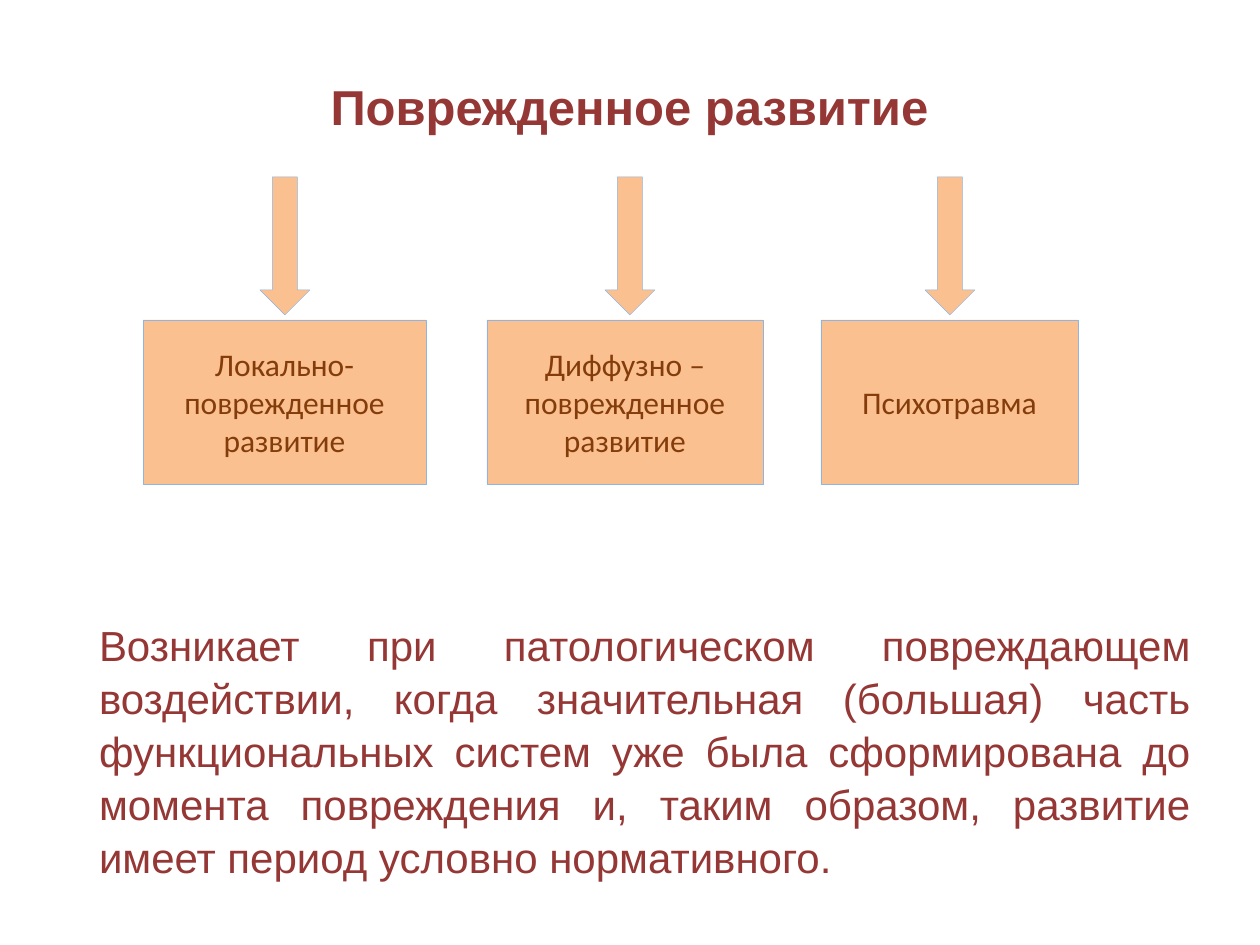
import pptx
import pptx.util
import pptx.dml.color
import pptx.enum.shapes
import pptx.enum.text

TITLE = "Поврежденное развитие"
BODY = (
    "Возникает при патологическом повреждающем воздействии, когда значительная "
    "(большая) часть функциональных систем уже была сформирована до момента "
    "повреждения и, таким образом, развитие имеет период условно нормативного."
)
# label, box left, box width, arrow centre
TYPES = [
    ("Локально-поврежденное развитие", 143, 283, 285),
    ("Диффузно –поврежденное развитие", 487, 276, 630),
    ("Психотравма", 821, 257, 950),
]
BOX_TOP, BOX_H = 320, 164
ARROW_TOP, ARROW_W, ARROW_H = 177, 50, 138
DARK_RED, BROWN, PEACH, BLUE = "953735", "843C0B", "FAC090", "8EB4E3"
SHAPE = pptx.enum.shapes.MSO_SHAPE
ALIGN = pptx.enum.text.PP_ALIGN
ANCHOR = pptx.enum.text.MSO_ANCHOR


def px(*values):
    return [pptx.util.Emu(v * 914400 // 126) for v in values]


def rgb(value):
    return pptx.dml.color.RGBColor.from_string(value)


def write(shape, text, size, font, color, align, anchor, bold=False):
    tf = shape.text_frame
    tf.word_wrap = True
    tf.vertical_anchor = anchor
    p = tf.paragraphs[0]
    p.alignment = align
    r = p.add_run()
    r.text = text
    r.font.size = pptx.util.Pt(size)
    r.font.name = font
    r.font.bold = bold
    r.font.color.rgb = rgb(color)
    return p


def add_peach(slide, kind, *box):
    s = slide.shapes.add_shape(kind, *px(*box))
    s.shadow.inherit = False
    s.fill.solid()
    s.fill.fore_color.rgb = rgb(PEACH)
    s.line.color.rgb = rgb(BLUE)
    s.line.width = pptx.util.Pt(0.25)
    return s


def main():
    """Build the slide on the types of damaged development."""
    prs = pptx.Presentation()
    prs.slide_width, prs.slide_height = px(1260, 945)
    slide = prs.slides.add_slide(prs.slide_layouts[6])

    title = slide.shapes.add_textbox(*px(204, 56, 851, 100))
    write(title, TITLE, 28, "Arial", DARK_RED, ALIGN.CENTER, ANCHOR.MIDDLE, True)

    body = slide.shapes.add_textbox(*px(75, 611, 1128, 243))
    body.text_frame.margin_left = px(24)[0]
    p = write(body, BODY, 24, "Arial", DARK_RED, ALIGN.JUSTIFY, ANCHOR.TOP)
    p.line_spacing = 1.05

    for label, left, width, centre in TYPES:
        s = add_peach(slide, SHAPE.RECTANGLE, left, BOX_TOP, width, BOX_H)
        write(s, label, 18, "Calibri", BROWN, ALIGN.CENTER, ANCHOR.MIDDLE)
        add_peach(slide, SHAPE.DOWN_ARROW, centre - ARROW_W // 2, ARROW_TOP, ARROW_W, ARROW_H)

    prs.save("out.pptx")


if __name__ == "__main__":
    main()
